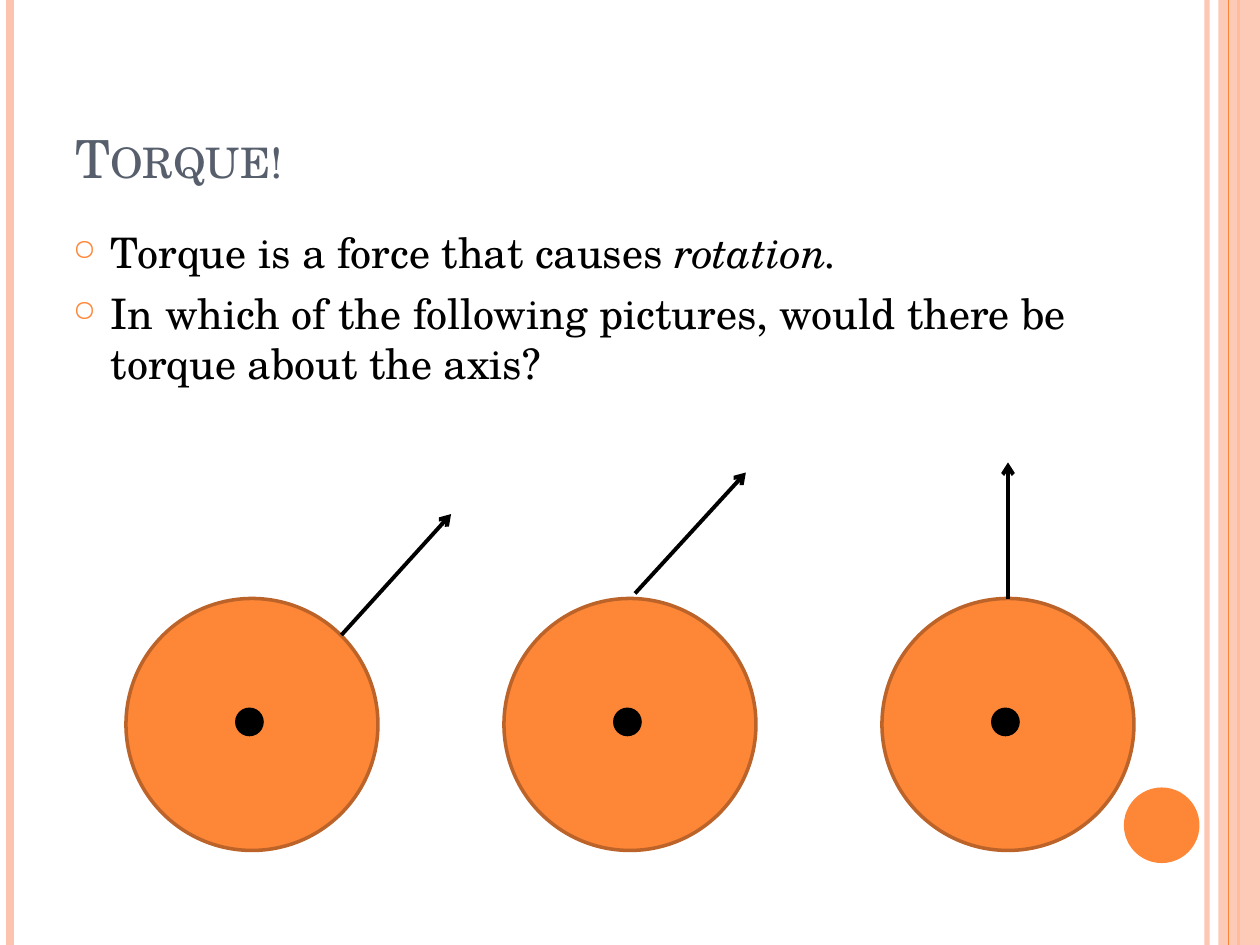
from lxml.etree import SubElement
from pptx import Presentation
from pptx.dml.color import RGBColor
from pptx.enum.shapes import MSO_CONNECTOR as Connector, MSO_SHAPE as Shape
from pptx.enum.text import MSO_ANCHOR as Anchor
from pptx.oxml.ns import qn
from pptx.util import Inches, Pt

COLORS = {
    "orange": "FE8637",
    "rim": "BC6329",
    "peach": "FEC3AE",
    "slate": "575F6D",
    "black": "000000",
}
FONT = "TeX Gyre Schola"
BULLETS = [
    [("Torque is a force that causes ", False), ("rotation.", True)],
    [("In which of the following pictures, would there be torque about the axis?", False)],
]
WHEEL_LEFTS = [1, 4, 7]
FORCES = [
    ((2.71, 5.04), (3.58, 4.08)),
    ((8, 4.75), (8, 3.67)),
    ((5.04, 4.71), (5.92, 3.75)),
]


def rgb(name):
    return RGBColor.from_string(COLORS[name])


def add_child(parent, tag, **attributes):
    return SubElement(parent, qn(tag), attributes)


def set_alpha(element, percent):
    color = next(element.iter(qn("a:srgbClr")))
    add_child(color, "a:alpha", val=str(percent * 1000))


def add_line(page, start, end, color, width, alpha=None, arrow=False):
    points = [Inches(value) for value in (*start, *end)]
    line = page.shapes.add_connector(Connector.STRAIGHT, *points)
    line.line.color.rgb = rgb(color)
    line.line.width = Pt(width)
    properties = line._element.spPr
    outline = properties.find(qn("a:ln"))
    if alpha:
        set_alpha(outline, alpha)
    if arrow:
        add_child(outline, "a:tailEnd", type="arrow")
    add_child(properties, "a:effectLst")


def add_solid(page, kind, left, top, width, height, fill, rim=None, alpha=None):
    shape = page.shapes.add_shape(kind, *map(Inches, (left, top, width, height)))
    shape.shadow.inherit = False
    shape.fill.solid()
    shape.fill.fore_color.rgb = rgb(fill)
    if alpha:
        set_alpha(shape._element.spPr, alpha)
    if rim:
        shape.line.color.rgb = rgb(rim)
        shape.line.width = Pt(2)
    else:
        shape.line.fill.background()


def add_box(page, left, top, width, height, anchor):
    box = page.shapes.add_textbox(*map(Inches, (left, top, width, height)))
    frame = box.text_frame
    frame.word_wrap = True
    frame.vertical_anchor = anchor
    return frame


def add_span(para, text, color, **formats):
    span = para.add_run()
    span.text = text
    span.font.color.rgb = rgb(color)
    for name, value in {"name": FONT, **formats}.items():
        setattr(span.font, name, value)
    return span


def add_bullet(para):
    para.space_before = Pt(6)
    properties = para._p.get_or_add_pPr()
    properties.set("marL", str(Inches(0.3)))
    properties.set("indent", str(-Inches(0.3)))
    color = add_child(properties, "a:buClr")
    add_child(color, "a:srgbClr", val=COLORS["orange"])
    add_child(properties, "a:buSzPct", val="70000")
    add_child(properties, "a:buChar", char="○")


def add_side_bands(page):
    def add_rule(x, color, width, alpha=None):
        add_line(page, (x, 0), (x, 7.5), color, width, alpha)

    add_rule(9.58, "peach", 3, 93)
    add_rule(0.08, "peach", 4.5)
    add_rule(9.83, "orange", 1.5)
    add_solid(page, Shape.RECTANGLE, 9.67, 0, 0.33, 7.5, "peach", alpha=87)
    add_rule(9.75, "orange", 0.75)
    add_solid(page, Shape.OVAL, 8.92, 6.25, 0.6, 0.6, "orange")


def add_title(page):
    frame = add_box(page, 0.5, 0.3, 8.17, 1.25, Anchor.BOTTOM)
    span = add_span(frame.paragraphs[0], "Torque!", "slate", size=Pt(30))
    span.font._element.set("cap", "small")


def add_body(page):
    frame = add_box(page, 0.48, 1.75, 9, 1.67, Anchor.TOP)
    for index, parts in enumerate(BULLETS):
        para = frame.add_paragraph() if index else frame.paragraphs[0]
        add_bullet(para)
        for text, italic in parts:
            add_span(para, text, "black", size=Pt(24), italic=italic)


def add_wheel(page, left):
    add_solid(page, Shape.OVAL, left, 4.75, 2, 2, "orange", "rim")
    add_solid(page, Shape.OVAL, left + 0.88, 5.63, 0.2, 0.2, "black", "black")


def main():
    deck = Presentation()
    deck.slide_width, deck.slide_height = Inches(10), Inches(7.5)
    page = deck.slides.add_slide(deck.slide_layouts[6])
    add_side_bands(page)
    add_title(page)
    add_body(page)
    for left in WHEEL_LEFTS:
        add_wheel(page, left)
    for start, end in FORCES:
        add_line(page, start, end, "black", 2.25, arrow=True)
    deck.save("out.pptx")


if __name__ == "__main__":
    main()
